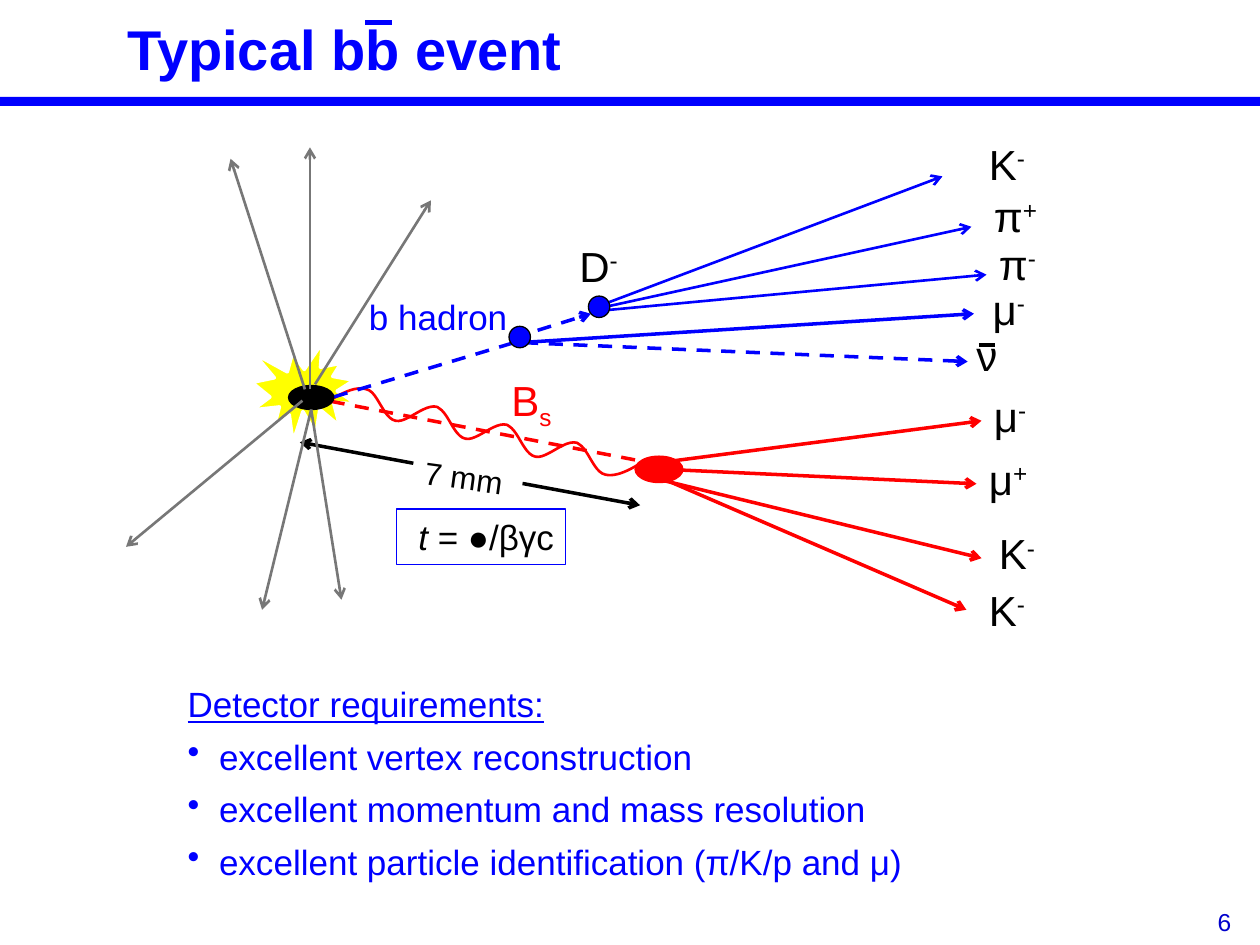
import pptx
import pptx.util
import pptx.dml.color
import pptx.enum.dml
import pptx.enum.shapes
import pptx.enum.text
import pptx.oxml
import pptx.oxml.ns

PX = 9144
C = {"blue": "0000FF", "navy": "0000CC", "red": "FF0000", "yellow": "FFFF00",
     "black": "000000", "white": "FFFFFF", "gray": "777777"}
RGB = {k: pptx.dml.color.RGBColor.from_string(v) for k, v in C.items()}
Pt = pptx.util.Pt
SHAPE = pptx.enum.shapes.MSO_SHAPE

prs = pptx.Presentation()
prs.slide_width, prs.slide_height = 1000 * PX, 750 * PX
s = prs.slides.add_slide(prs.slide_layouts[6])


def add_run(p, text, size, color, base=0, **fmt):
    r = p.add_run()
    r.text = text
    for name, value in {"name": "Arial", "size": Pt(size), **fmt}.items():
        setattr(r.font, name, value)
    r.font.color.rgb = RGB[color]
    if base:
        r.font._element.set("baseline", str(base * 1000))


def add_shape(kind, box, fill=None, line=None, width=0.75):
    sp = s.shapes.add_shape(kind, *[v * PX for v in box])
    sp.shadow.inherit = False
    for part, color in ((sp.fill, fill), (sp.line.fill, line)):
        if color:
            part.solid()
            part.fore_color.rgb = RGB[color]
        else:
            part.background()
    if line:
        sp.line.width = Pt(width)
    return sp


add_shape(SHAPE.RECTANGLE, (0, 77, 1000, 7), "blue")
add_shape(SHAPE.EXPLOSION1, (200, 272, 83, 79), "yellow", "white", 2)

fall = [(9, 2), (13, 23), (23, 25)]
rise = [(9, 2), (23, -14), (33, -11)]
curves = [((258, 320), [(12, -7), (23, -14), (33, -11)])]
for k in range(4):
    x, y = 291 + 55.5 * k, 309 + 14.25 * k
    curves.append(((x, y), fall))
    curves.append(((x + 23, y + 25), rise if k < 3 else [(9, 2), (20, -4), (31, -11)]))
points = []
for start, controls in curves:
    for i in range(1, 13):
        t = i / 12
        w = (3 * t * (1 - t) ** 2, 3 * t * t * (1 - t), t ** 3)
        points.append([start[a] + sum(f * c[a] for f, c in zip(w, controls)) for a in (0, 1)])
fb = s.shapes.build_freeform(258 * 100, 320 * 100, scale=PX / 100)
fb.add_line_segments([(round(x * 100), round(y * 100)) for x, y in points], close=False)
sp = fb.convert_to_shape()
sp.shadow.inherit = False
sp.fill.background()
sp.line.color.rgb = RGB["red"]
sp.line.width = Pt(1.5)

tracks = [
    ("blue", 2, False, "t", (412, 272, 773, 249)),
    ("blue", 2, True, "t", (408, 268, 469, 249)),
    ("blue", 2, True, "", (265, 315, 421, 268)),
    ("blue", 1.5, False, "t", (475, 243, 748, 140)),
    ("blue", 1.5, False, "t", (483, 243, 771, 180)),
    ("blue", 1.5, False, "t", (483, 246, 783, 218)),
    ("blue", 2, True, "t", (416, 272, 768, 287)),
    ("red", 2, True, "", (504, 365, 260, 318)),
    ("red", 2, False, "t", (517, 368, 779, 334)),
    ("red", 2, False, "t", (517, 372, 775, 384)),
    ("red", 2, False, "t", (521, 380, 779, 443)),
    ("red", 2, False, "t", (517, 376, 767, 484)),
    ("black", 2, False, "ht", (238, 351, 508, 401)),
    ("black", 2, False, "", (777, 274, 790, 274)),
    ("blue", 3, False, "", (290, 18, 311, 18)),
]
vertices = [
    ((229, 306, 36, 19), "black", "black"),
    ((404, 259, 17, 17), "blue", "black"),
    ((467, 235, 17, 17), "blue", "black"),
    ((504, 362, 38, 21), "red", "red"),
]
for ends in [(250, 305, 342, 159), (246, 309, 246, 117), (240, 318, 100, 434),
             (242, 309, 183, 126), (247, 325, 208, 484), (247, 325, 271, 476)]:
    tracks.append(("gray", 1.5, False, "t", ends))

for color, width, dashed, arrows, ends in tracks:
    if color == "gray" and vertices:
        for box, fill, line in vertices:
            add_shape(SHAPE.OVAL, box, fill, line)
        vertices = []
        distance = add_shape(SHAPE.RECTANGLE, (327, 359, 88, 40), "white")
    ln = s.shapes.add_connector(pptx.enum.shapes.MSO_CONNECTOR.STRAIGHT, *[v * PX for v in ends])
    ln.line.color.rgb = RGB[color]
    ln.line.width = Pt(width)
    if dashed:
        ln.line.dash_style = pptx.enum.dml.MSO_LINE.DASH
    for a in arrows:
        tag = {"h": "a:headEnd", "t": "a:tailEnd"}[a]
        end = pptx.oxml.parse_xml(f'<{tag} {pptx.oxml.ns.nsdecls("a")} type="arrow"/>')
        ln.line._get_or_add_ln().append(end)
    ln._element.spPr.append(pptx.oxml.parse_xml(f'<a:effectLst {pptx.oxml.ns.nsdecls("a")}/>'))

distance.rotation = 7.8
formula = add_shape(SHAPE.RECTANGLE, (315, 404, 134, 44), None, "blue")
for sp, left, runs in [
    (distance, 10, [("7 mm", 18, {})]),
    (formula, 17, [("t ", 20, {"italic": True}), ("= ●/βγc", 20, {})]),
]:
    tf = sp.text_frame
    for name, value in {"word_wrap": True, "margin_left": left * PX, "margin_right": 0,
                        "vertical_anchor": pptx.enum.text.MSO_ANCHOR.TOP}.items():
        setattr(tf, name, value)
    tf.paragraphs[0].alignment = pptx.enum.text.PP_ALIGN.LEFT
    for text, size, fmt in runs:
        add_run(tf.paragraphs[0], text, size, "black", **fmt)

labels = [
    ((91, -1, 865, 78), "Typical bb event", "", 32, "blue", 0),
    ((754, 715, 233, 31), "6", "", 14, "navy", 0),
    ((283, 230, 138, 44), "b hadron", "", 20, "blue", 0),
    ((396, 292, 58, 51), "B", "s", 24, "red", -25),
    ((765, 257, 50, 50), "ν", "", 24, "black", 0),
]
for x, y, name, charge in [
    (450, 186, "D", "-"), (775, 105, "K", "-"), (779, 146, "π", "+"),
    (783, 184, "π", "-"), (778, 220, "μ", "-"), (779, 305, "μ", "-"),
    (775, 355, "μ", "+"), (783, 414, "K", "-"), (775, 459, "K", "-"),
]:
    labels.append(((x, y, 62, 51), name, charge, 24, "black", 30))

for box, text, script, size, color, base in labels:
    tf = s.shapes.add_textbox(*[v * PX for v in box]).text_frame
    tf.word_wrap = True
    p = tf.paragraphs[0]
    title = size == 32
    add_run(p, text, size, color, bold=title)
    if script:
        add_run(p, script, size, color, base)
    if title:
        tf.vertical_anchor = pptx.enum.text.MSO_ANCHOR.MIDDLE
    if color == "navy":
        p.alignment = pptx.enum.text.PP_ALIGN.RIGHT

tf = s.shapes.add_textbox(139 * PX, 537 * PX, 823 * PX, 170 * PX).text_frame
tf.word_wrap = True
for i, text in enumerate([
    "Detector requirements:",
    "excellent vertex reconstruction",
    "excellent momentum and mass resolution",
    "excellent particle identification (π/K/p and μ)",
]):
    p = tf.add_paragraph() if i else tf.paragraphs[0]
    p.space_before = Pt(6)
    add_run(p, text, 20, "blue", underline=i == 0)
    pPr = p._p.get_or_add_pPr()
    pPr.set("marL", str(25 * PX))
    pPr.set("indent", str(-25 * PX))
    if i:
        pPr.append(pptx.oxml.parse_xml(f'<a:buChar {pptx.oxml.ns.nsdecls("a")} char="•"/>'))

prs.save("out.pptx")
